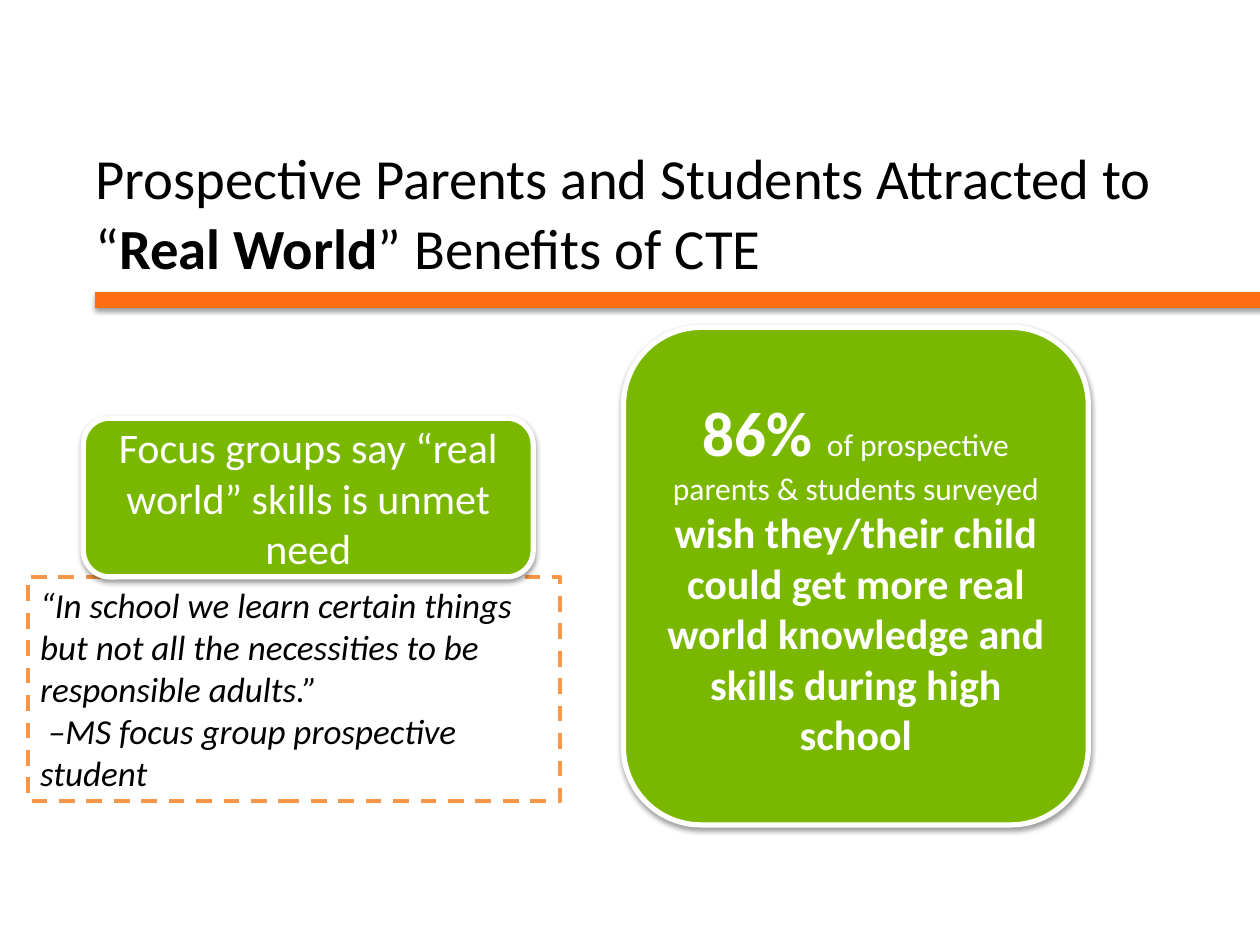
from lxml import etree
from pptx import Presentation
from pptx import util as u
from pptx.dml.color import RGBColor
from pptx.enum import dml, shapes, text
from pptx.oxml import ns

BLACK = RGBColor(0x00, 0x00, 0x00)
WHITE = RGBColor(0xFF, 0xFF, 0xFF)
GREEN = RGBColor(0x7A, 0xB8, 0x00)
RULE = RGBColor(0xFF, 0x6D, 0x13)
DASH = RGBColor(0xF7, 0x96, 0x46)
FONT = "Calibri"

# Content: paragraphs of runs (text, size, bold)
TITLE = [[
    ("Prospective Parents and Students Attracted to “", 32.4, False),
    ("Real World", 32.4, True),
    ("” Benefits of CTE", 32.4, False),
]]
QUOTE = [
    [("“In school we learn certain things but not all the necessities "
      "to be responsible adults.”", 20, False)],
    [(" –MS focus group prospective student", 20, False)],
]
# Green cards: place (left, top, width, height in cm) and text
CARDS = [
    ((12.57, 6.6, 9.37, 10.03), [[
        ("86% ", 36, True),
        ("of prospective parents & students surveyed ", 18, False),
        ("wish they/their child could get more real world knowledge "
         "and skills during high school", 24, True),
    ]]),
    ((1.68, 8.43, 9.07, 3.2), [[
        ("Focus groups say “real world” skills is unmet need", 24, False),
    ]]),
]
MID = text.MSO_ANCHOR.MIDDLE
LEFT, CENTER = text.PP_ALIGN.LEFT, text.PP_ALIGN.CENTER


def place(box):
    return [u.Cm(n) for n in box]


def write(shape, paras, color, align, anchor, italic=False):
    frame = shape.text_frame
    frame.word_wrap = True
    frame.vertical_anchor = anchor
    frame.text = "\n".join("" for _ in paras)
    for para, runs in zip(frame.paragraphs, paras):
        para.alignment = align
        for words, size, bold in runs:
            run = para.add_run()
            run.text = words
            font = run.font
            font.name, font.size = FONT, u.Pt(size)
            font.bold, font.italic = bold, italic
            font.color.rgb = color


def shade(shape):
    """Add a soft shadow below; call after the fill and line are set."""
    props = shape._element.spPr
    props.append(etree.fromstring(
        f'<a:effectLst {ns.nsdecls("a")}>'
        '<a:outerShdw blurRad="40000" dist="20000" dir="5400000" rotWithShape="0">'
        '<a:srgbClr val="000000"><a:alpha val="38000"/></a:srgbClr>'
        '</a:outerShdw></a:effectLst>'))


def stroke(shape, color, width):
    shape.line.color.rgb = color
    shape.line.width = u.Pt(width)


deck = Presentation()
deck.slide_width, deck.slide_height = u.Cm(25.4), u.Cm(19.05)
slide = deck.slides.add_slide(deck.slide_layouts[6])
parts = slide.shapes

# Rule under the title
rule = parts.add_connector(shapes.MSO_CONNECTOR.STRAIGHT,
                           *place((1.91, 6.04, 25.65, 6.04)))
stroke(rule, RULE, 9)
shade(rule)

# Dashed quote
quote = parts.add_shape(shapes.MSO_SHAPE.RECTANGLE,
                        *place((0.56, 11.63, 10.74, 4.52)))
quote.fill.background()
stroke(quote, DASH, 2.25)
quote.line.dash_style = dml.MSO_LINE.DASH
quote.shadow.inherit = False
write(quote, QUOTE, BLACK, LEFT, text.MSO_ANCHOR.TOP, italic=True)

# Green cards
for box, paras in CARDS:
    card = parts.add_shape(shapes.MSO_SHAPE.ROUNDED_RECTANGLE, *place(box))
    card.fill.solid()
    card.fill.fore_color.rgb = GREEN
    stroke(card, WHITE, 3)
    shade(card)
    write(card, paras, WHITE, CENTER, MID)

# Title
title = parts.add_textbox(*place((1.68, 2.67, 21.95, 3.18)))
write(title, TITLE, BLACK, LEFT, MID)
title.text_frame.paragraphs[0].line_spacing = u.Pt(40)

deck.save("out.pptx")
